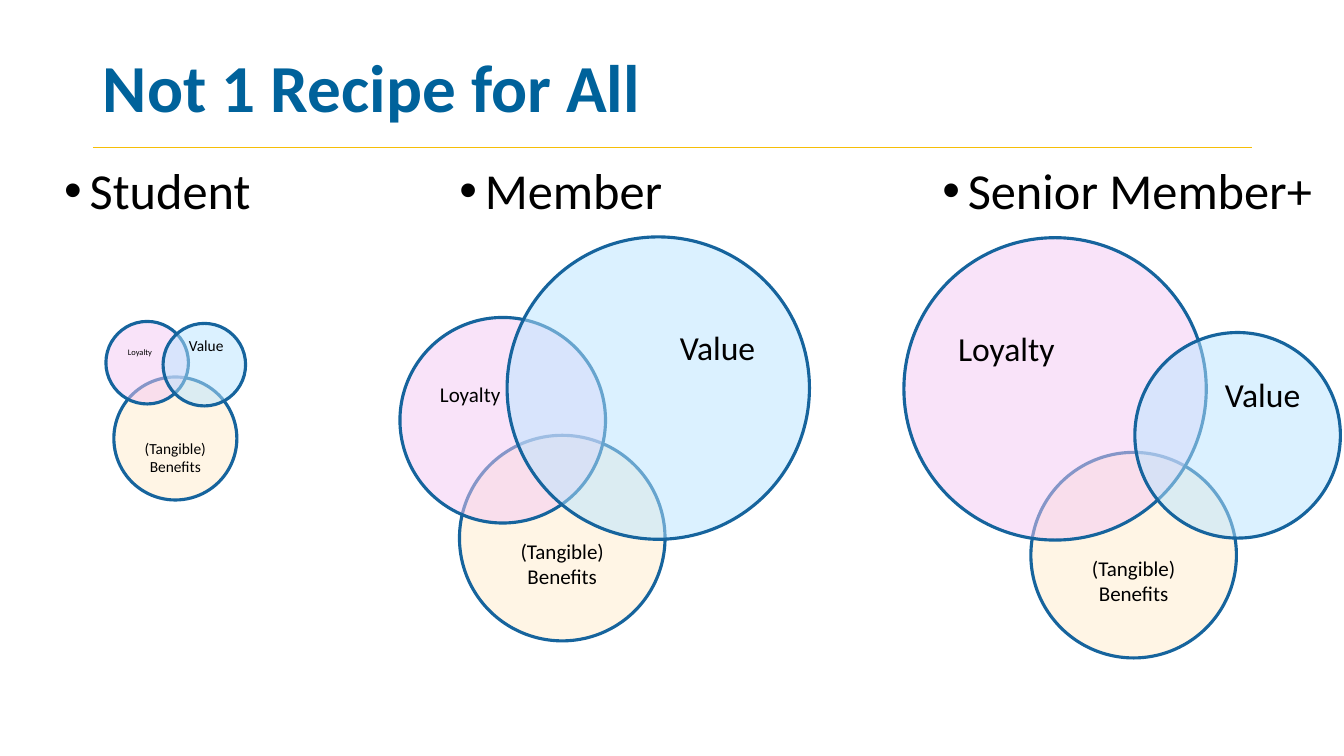
"""Build the slide comparing the value mix of three membership grades."""
from lxml import etree
from pptx import Presentation
from pptx.dml.color import RGBColor
from pptx.enum import shapes, text
from pptx.oxml import ns
from pptx.util import Cm, Pt

FONT = "Calibri"
BLACK = RGBColor(0x00, 0x00, 0x00)
TITLE_BLUE = RGBColor(0x00, 0x62, 0x9B)
OUTLINE_BLUE = RGBColor(0x16, 0x64, 0x9D)
GOLD = RGBColor(0xF6, 0xBE, 0x07)
CREAM = RGBColor(0xFF, 0xED, 0xCC)
PINK = RGBColor(0xF4, 0xC8, 0xF4)
SKY = RGBColor(0xB8, 0xE5, 0xFF)

LABELS = [
    ("(Tangible) Benefits", CREAM, text.PP_ALIGN.CENTER),
    ("Loyalty", PINK, text.PP_ALIGN.LEFT),
    ("Value", SKY, text.PP_ALIGN.RIGHT),
]
GRADES = [
    ("Student", 1.37, 7.57,
     [(2.87, 9.5, 3.1, 11), (2.67, 8.1, 2.08, 6), (4.11, 8.15, 2.08, 11)]),
    ("Member", 11.33, 9.78,
     [(11.58, 10.97, 5.18, 15), (10.08, 8, 5.18, 15), (12.78, 5.97, 7.62, 24)]),
    ("Senior Member+", 23.5, 10.29,
     [(25.98, 11.4, 5.18, 15), (22.78, 5.99, 7.62, 24), (28.6, 8.38, 5.18, 24)]),
]


def format_run(paragraph, size, color, bold=False):
    font = paragraph.runs[0].font
    font.name = FONT
    font.size = Pt(size)
    font.bold = bold
    font.color.rgb = color


presentation = Presentation()
presentation.slide_width = Cm(33.87)
presentation.slide_height = Cm(19.05)
slide = presentation.slides.add_slide(presentation.slide_layouts[5])

rule = slide.shapes.add_connector(
    shapes.MSO_CONNECTOR.STRAIGHT, Cm(2.34), Cm(3.71), Cm(31.55), Cm(3.71))
rule.line.color.rgb = GOLD
rule.line.width = Pt(0.5)
etree.SubElement(rule._element.spPr, ns.qn("a:effectLst"))

title = slide.shapes.title
title.left, title.top, title.width, title.height = Cm(2.34), Cm(1.02), Cm(26.06), Cm(2.54)
title.text_frame.text = "Not 1 Recipe for All"
title.text_frame.auto_size = text.MSO_AUTO_SIZE.NONE
title.text_frame.vertical_anchor = text.MSO_ANCHOR.MIDDLE
paragraph = title.text_frame.paragraphs[0]
paragraph.alignment = text.PP_ALIGN.LEFT
paragraph.line_spacing = 0.9
format_run(paragraph, 48, TITLE_BLUE, bold=True)

for grade, left, width, circles in GRADES:
    heading = slide.shapes.add_textbox(Cm(left), Cm(4.06), Cm(width), Cm(1.9))
    heading.text_frame.word_wrap = True
    heading.text_frame.text = grade
    paragraph = heading.text_frame.paragraphs[0]
    paragraph.line_spacing = 0.9
    properties = paragraph._p.get_or_add_pPr()
    properties.set("marL", str(Cm(0.64)))
    properties.set("indent", str(-Cm(0.64)))
    etree.SubElement(properties, ns.qn("a:buFont"), typeface="Arial")
    etree.SubElement(properties, ns.qn("a:buChar"), char="•")
    format_run(paragraph, 36, BLACK)

    for (label, color, alignment), (x, y, diameter, size) in zip(LABELS, circles):
        circle = slide.shapes.add_shape(
            shapes.MSO_SHAPE.OVAL, Cm(x), Cm(y), Cm(diameter), Cm(diameter))
        circle.shadow.inherit = False
        circle.fill.solid()
        circle.fill.fore_color.rgb = color
        fill_color = circle._element.spPr.find(".//" + ns.qn("a:srgbClr"))
        etree.SubElement(fill_color, ns.qn("a:alpha"), val="50000")
        circle.line.color.rgb = OUTLINE_BLUE
        circle.line.width = Pt(2.25)

        frame = circle.text_frame
        frame.word_wrap = True
        frame.vertical_anchor = text.MSO_ANCHOR.MIDDLE
        two_lines = Pt(3.6 + 2.44 * size)
        if color == CREAM:
            frame.margin_top = two_lines
        else:
            frame.margin_bottom = two_lines
        frame.text = label
        frame.paragraphs[0].alignment = alignment
        format_run(frame.paragraphs[0], size, BLACK)

presentation.save("out.pptx")
